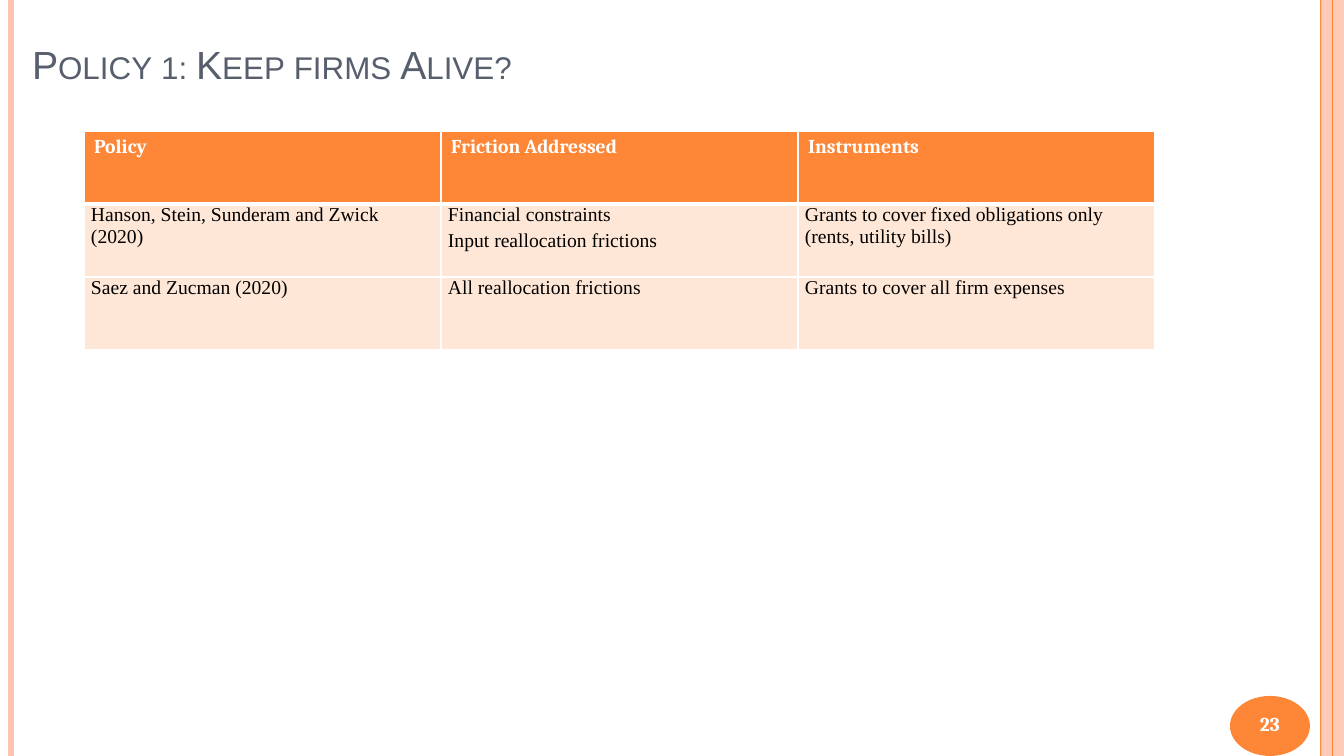
from lxml.etree import SubElement
from pptx import Presentation
from pptx.dml.color import RGBColor
from pptx.enum.shapes import MSO_CONNECTOR, MSO_SHAPE
from pptx.enum.text import MSO_ANCHOR, MSO_AUTO_SIZE, PP_ALIGN
from pptx.oxml.ns import qn
from pptx.util import Emu, Pt

SLIDE_W, SLIDE_H = 1344, 756
ORANGE, PEACH, PALE, SLATE = "FE8637", "FEC3AE", "FFE7D7", "575F6D"
WHITE, BLACK = "FFFFFF", "000000"

TITLE_FONT = {"name": "Arial", "size": Pt(28), "bold": False}
HEADER_FONT = {"name": "Cambria", "size": Pt(14), "bold": True}
BODY_FONT = {"name": "Times New Roman", "size": Pt(14), "bold": False}
BODY_MARGINS = {"margin_left": 7, "margin_right": 7, "margin_top": 0, "margin_bottom": 0}

HEADERS = ["Policy", "Friction Addressed", "Instruments"]
POLICIES = [
    [["Hanson, Stein, Sunderam and Zwick (2020)"],
     ["Financial constraints", "Input reallocation frictions"],
     ["Grants to cover fixed obligations only (rents, utility bills)"]],
    [["Saez and Zucman (2020)"],
     ["All reallocation frictions"],
     ["Grants to cover all firm expenses"]],
]


def px(length):
    return Emu(round(length * 914400 / 100.8))


def rgb(color):
    return RGBColor.from_string(color)


def apply_format(target, values):
    for name, value in values.items():
        setattr(target, name, value)


def write(paragraph, text, font, color):
    run = paragraph.add_run()
    run.text = text
    apply_format(run.font, font)
    run.font.color.rgb = rgb(color)
    return run


def add_rule(slide, x, color, weight):
    """Draw a vertical line over the full slide height."""
    rule = slide.shapes.add_connector(MSO_CONNECTOR.STRAIGHT, px(x), 0, px(x), px(SLIDE_H))
    rule.line.color.rgb = rgb(color)
    rule.line.width = Pt(weight)
    SubElement(rule._element.spPr, qn("a:effectLst"))


def add_filled_shape(slide, kind, box, color):
    shape = slide.shapes.add_shape(kind, *map(px, box))
    shape.shadow.inherit = False
    shape.fill.solid()
    shape.fill.fore_color.rgb = rgb(color)
    shape.line.fill.background()
    return shape


def add_side_bands(slide):
    add_rule(slide, 11, PEACH, 4.5)
    band_left = 1321
    add_rule(slide, band_left, ORANGE, 1.5)
    band = add_filled_shape(slide, MSO_SHAPE.RECTANGLE,
                            (band_left, 0, SLIDE_W - band_left, SLIDE_H), PEACH)
    band_color = band._element.spPr.find(qn("a:solidFill"))[0]
    SubElement(band_color, qn("a:alpha"), val="87000")
    add_rule(slide, band_left + 12, ORANGE, 0.75)


def add_page_number(slide, number, box):
    left, top, width, height = box
    add_filled_shape(slide, MSO_SHAPE.OVAL, box, ORANGE)
    label = slide.shapes.add_textbox(px(left - 5), px(top - 1), px(width + 10), px(height - 3))
    apply_format(label.text_frame, {"word_wrap": True, "vertical_anchor": MSO_ANCHOR.MIDDLE})
    paragraph = label.text_frame.paragraphs[0]
    paragraph.alignment = PP_ALIGN.CENTER
    write(paragraph, number, HEADER_FONT, WHITE)


def set_title(slide, text, box):
    title = slide.shapes.title
    apply_format(title, dict(zip(("left", "top", "width", "height"), map(px, box))))
    apply_format(title.text_frame, {"word_wrap": True, "auto_size": MSO_AUTO_SIZE.NONE,
                                    "vertical_anchor": MSO_ANCHOR.BOTTOM})
    paragraph = title.text_frame.paragraphs[0]
    paragraph.alignment = PP_ALIGN.LEFT
    run = write(paragraph, text, TITLE_FONT, SLATE)
    run._r.get_or_add_rPr().set("cap", "small")


def format_cell(cell, fill, edge_weights):
    """Fill a cell and give it white borders; weights map an edge tag to points."""
    properties = cell._tc.get_or_add_tcPr()
    for edge, weight in edge_weights.items():
        border = SubElement(properties, qn(f"a:{edge}"), w=str(Pt(weight)))
        SubElement(SubElement(border, qn("a:solidFill")), qn("a:srgbClr"), val=WHITE)
    cell.fill.solid()
    cell.fill.fore_color.rgb = rgb(fill)


def add_policy_table(slide, box):
    rows, columns = len(POLICIES) + 1, len(HEADERS)
    left, top, width, height = box
    table = slide.shapes.add_table(rows, columns, *map(px, box)).table
    table.horz_banding = False
    for column in table.columns:
        column.width = px(width / columns)
    for row in table.rows:
        row.height = px(height / rows)

    for index, header in enumerate(HEADERS):
        cell = table.cell(0, index)
        format_cell(cell, ORANGE, {"lnL": 1, "lnR": 1, "lnT": 1, "lnB": 3})
        write(cell.text_frame.paragraphs[0], header, HEADER_FONT, WHITE)

    for row_index, policy in enumerate(POLICIES, start=1):
        top_weight = 3 if row_index == 1 else 1
        for index, entries in enumerate(policy):
            cell = table.cell(row_index, index)
            format_cell(cell, PALE, {"lnL": 1, "lnR": 1, "lnT": top_weight, "lnB": 1})
            apply_format(cell, {side: px(gap) for side, gap in BODY_MARGINS.items()})
            frame = cell.text_frame
            for position, entry in enumerate(entries):
                paragraph = frame.add_paragraph() if position else frame.paragraphs[0]
                paragraph.space_after = Pt(3)
                write(paragraph, entry, BODY_FONT, BLACK)


def main():
    presentation = Presentation()
    presentation.slide_width, presentation.slide_height = px(SLIDE_W), px(SLIDE_H)
    slide = presentation.slides.add_slide(presentation.slide_layouts[5])
    add_side_bands(slide)
    set_title(slide, "Policy 1: Keep firms Alive?", (22, 13, 1277, 79))
    add_page_number(slide, "23", (1230, 696, 80, 60))
    add_policy_table(slide, (84, 131, 1071, 219))
    presentation.save("out.pptx")


if __name__ == "__main__":
    main()
